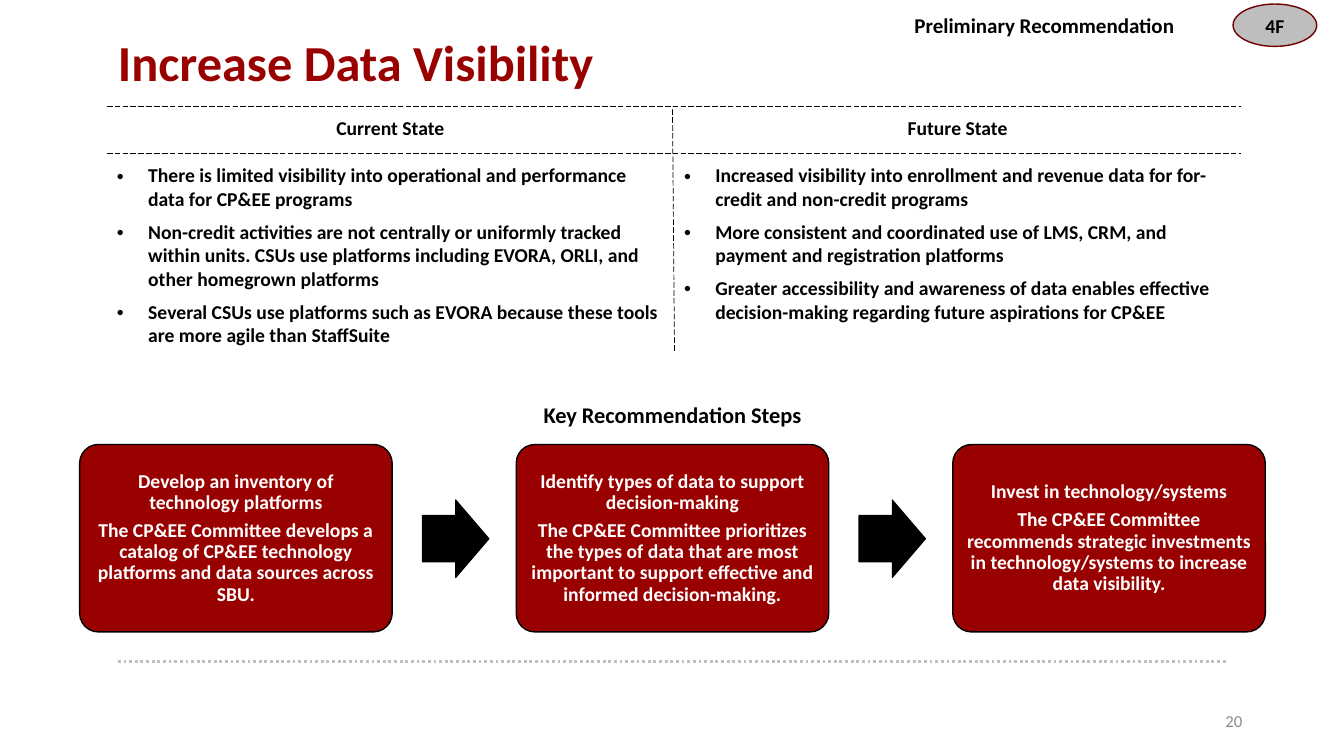
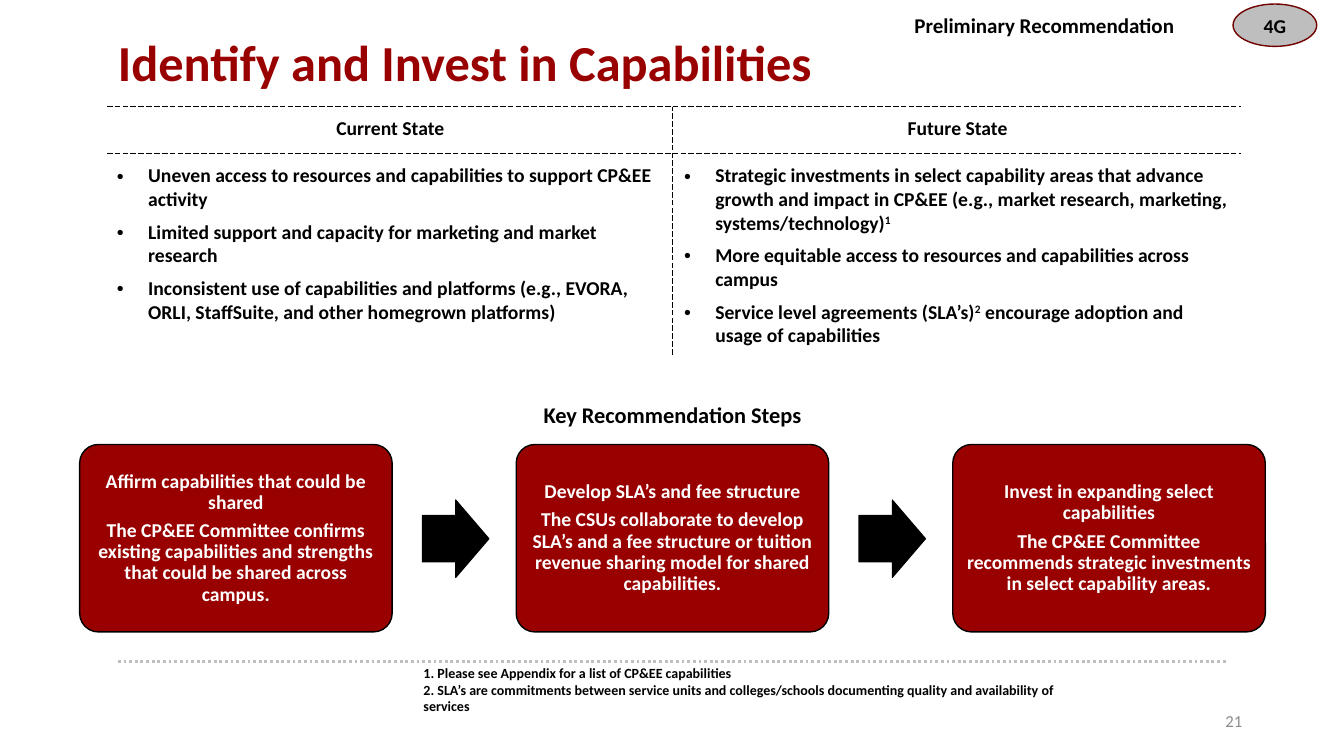
from lxml import etree
from pptx import Presentation
from pptx.dml.color import RGBColor
from pptx.enum.dml import MSO_LINE
from pptx.enum.shapes import MSO_CONNECTOR, MSO_SHAPE
from pptx.enum.text import MSO_ANCHOR, PP_ALIGN
from pptx.oxml.ns import qn
from pptx.util import Emu, Pt

LEFT, CENTER, RIGHT = PP_ALIGN.LEFT, PP_ALIGN.CENTER, PP_ALIGN.RIGHT
TOP, MIDDLE = MSO_ANCHOR.TOP, MSO_ANCHOR.MIDDLE
DASH, DOTS = MSO_LINE.LONG_DASH, MSO_LINE.ROUND_DOT
STRAIGHT = MSO_CONNECTOR.STRAIGHT
OVAL, ROUND, ARROW = MSO_SHAPE.OVAL, MSO_SHAPE.ROUNDED_RECTANGLE, MSO_SHAPE.RIGHT_ARROW

RED, MAROON, BLACK, WHITE = "990000", "710000", "000000", "FFFFFF"
SILVER, RULE, GRAY = "BEBEBE", "BFBFBF", "8C8C8C"

SLIDES = [
    {
        "title": "Increase Data Visibility",
        "code": "4F",
        "page": "20",
        "foot": (669, 348),
        "states": [
            [
                "There is limited visibility into operational and performance data for CP&EE programs",
                "Non-credit activities are not centrally or uniformly tracked within units. CSUs use platforms including EVORA, ORLI, and other homegrown platforms",
                "Several CSUs use platforms such as EVORA because these tools are more agile than StaffSuite",
            ],
            [
                "Increased visibility into enrollment and revenue data for for-credit and non-credit programs",
                "More consistent and coordinated use of LMS, CRM, and payment and registration platforms",
                "Greater accessibility and awareness of data enables effective decision-making regarding future aspirations for CP&EE",
            ],
        ],
        "steps": [
            [
                "Develop an inventory of technology platforms",
                "The CP&EE Committee develops a catalog of CP&EE technology platforms and data sources across SBU.",
            ],
            [
                "Identify types of data to support decision-making",
                "The CP&EE Committee prioritizes the types of data that are most important to support effective and informed decision-making.",
            ],
            [
                "Invest in technology/systems",
                "The CP&EE Committee recommends strategic investments in technology/systems to increase data visibility.",
            ],
        ],
        "notes": [],
    },
    {
        "title": "Identify and Invest in Capabilities",
        "code": "4G",
        "page": "21",
        "foot": (667, 352),
        "states": [
            [
                "Uneven access to resources and capabilities to support CP&EE activity",
                "Limited support and capacity for marketing and market research",
                "Inconsistent use of capabilities and platforms (e.g., EVORA, ORLI, StaffSuite, and other homegrown platforms)",
            ],
            [
                "Strategic investments in select capability areas that advance growth and impact in CP&EE (e.g., market research, marketing, systems/technology)^1",
                "More equitable access to resources and capabilities across campus",
                "Service level agreements (SLA’s)^2^ encourage adoption and usage of capabilities",
            ],
        ],
        "steps": [
            [
                "Affirm capabilities that could be shared",
                "The CP&EE Committee confirms existing capabilities and strengths that could be shared across campus.",
            ],
            [
                "Develop SLA’s and fee structure",
                "The CSUs collaborate to develop SLA’s and a fee structure or tuition revenue sharing model for shared capabilities.",
            ],
            [
                "Invest in expanding select capabilities",
                "The CP&EE Committee recommends strategic investments in select capability areas.",
            ],
        ],
        "notes": [
            "1. Please see Appendix for a list of CP&EE capabilities",
            "2. SLA’s are commitments between service units and colleges/schools documenting quality and availability of services",
        ],
    },
]


def px(size):
    return Emu(size * 9144)


def color(code):
    return RGBColor.from_string(code)


class Deck:
    font = "Calibri"

    def __init__(self):
        self.prs = Presentation()
        self.prs.slide_width, self.prs.slide_height = px(1333), px(750)
        self.slide = None

    def start(self):
        self.slide = self.prs.slides.add_slide(self.prs.slide_layouts[6])

    def fill_text(self, frame, lines, size=14, ink=BLACK, bold=True, align=LEFT,
                  bullet=False, after=0, pitch=None):
        for i, line in enumerate(lines):
            para = frame.paragraphs[0] if i == 0 else frame.add_paragraph()
            for j, part in enumerate(line.split("^")):
                run = para.add_run()
                run.text = part
                if j % 2:
                    run._r.get_or_add_rPr().set("baseline", "30000")
            para.alignment = align
            para.space_after = Pt(after)
            if pitch:
                para.line_spacing = pitch
            if bullet:
                props = para._p.get_or_add_pPr()
                props.set("marL", str(px(31)))
                props.set("indent", str(px(-31)))
                etree.SubElement(props, qn("a:buFont")).set("typeface", "Arial")
                etree.SubElement(props, qn("a:buChar")).set("char", "•")
            font = para.font
            font.name, font.size, font.bold = self.font, Pt(size), bold
            font.color.rgb = color(ink)

    def pad(self, frame, gap, anchor):
        frame.word_wrap = True
        frame.vertical_anchor = anchor
        frame.margin_left = frame.margin_right = px(gap)
        frame.margin_top = frame.margin_bottom = px(gap)

    def text(self, box, lines, anchor=TOP, gap=0, **style):
        frame = self.slide.shapes.add_textbox(*map(px, box)).text_frame
        self.pad(frame, gap, anchor)
        self.fill_text(frame, lines, **style)

    def shape(self, kind, box, fill, edge, width=1, adjust=(), lines=(), **style):
        shape = self.slide.shapes.add_shape(kind, *map(px, box))
        shape.shadow.inherit = False
        shape.fill.solid()
        shape.fill.fore_color.rgb = color(fill)
        shape.line.color.rgb = color(edge)
        shape.line.width = Pt(width)
        for i, value in enumerate(adjust):
            shape.adjustments[i] = value
        self.pad(shape.text_frame, 6, MIDDLE)
        self.fill_text(shape.text_frame, lines, align=CENTER, **style)

    def line(self, start, end, ink=BLACK, width=0.5, dash=DASH):
        line = self.slide.shapes.add_connector(STRAIGHT, *map(px, start + end))
        line.line.color.rgb = color(ink)
        line.line.width = Pt(width)
        line.line.dash_style = dash
        etree.SubElement(line._element.spPr, qn("a:effectLst"))

    def table(self, box, heads, states):
        table = self.slide.shapes.add_table(2, len(heads), *map(px, box)).table
        table.first_row = table.horz_banding = False
        table.rows[0].height, table.rows[1].height = px(60), px(box[3] - 60)
        for i, (head, state) in enumerate(zip(heads, states)):
            top, body = table.cell(0, i), table.cell(1, i)
            top.fill.background()
            body.fill.background()
            top.vertical_anchor = MIDDLE
            self.fill_text(top.text_frame, [head], align=CENTER)
            self.fill_text(body.text_frame, state, bullet=True, after=6)

    def steps(self, steps):
        for i, lines in enumerate(steps):
            left = 79 + i * 433
            self.shape(ROUND, (left, 441, 310, 186), RED, BLACK, adjust=[0.1],
                       lines=lines, ink=WHITE, after=5, pitch=0.9)
            if i < len(steps) - 1:
                self.shape(ARROW, (left + 340, 496, 66, 77), BLACK, BLACK,
                           width=0.75, adjust=[0.6, 0.5])

    def frame(self, title, code, page):
        self.line((117, 656), (1217, 656), RULE, 2, DOTS)
        self.text((117, 30, 1100, 61), [title], MIDDLE, size=36, ink=RED)
        self.text((907, 12, 316, 25), ["Preliminary Recommendation"], size=15)
        self.shape(OVAL, (1223, 4, 83, 42), SILVER, MAROON, lines=[code])
        self.text((942, 695, 300, 40), [page], MIDDLE, 10, size=12, ink=GRAY,
                  bold=False, align=RIGHT)

    def build(self, data):
        self.start()
        self.frame(data["title"], data["code"], data["page"])
        self.table((106, 98, 1125, 250), ["Current State", "Future State"], data["states"])
        self.text((78, 398, 1178, 27), ["Key Recommendation Steps"], size=16, align=CENTER)
        self.steps(data["steps"])
        if data["notes"]:
            self.text((420, 659, 671, 50), data["notes"], size=10)
        for y in (106, 152):
            self.line((106, y), (1231, y))
        self.line(data["foot"], (667, 106))


def main():
    deck = Deck()
    for data in SLIDES:
        deck.build(data)
    deck.prs.save("out.pptx")


if __name__ == "__main__":
    main()
